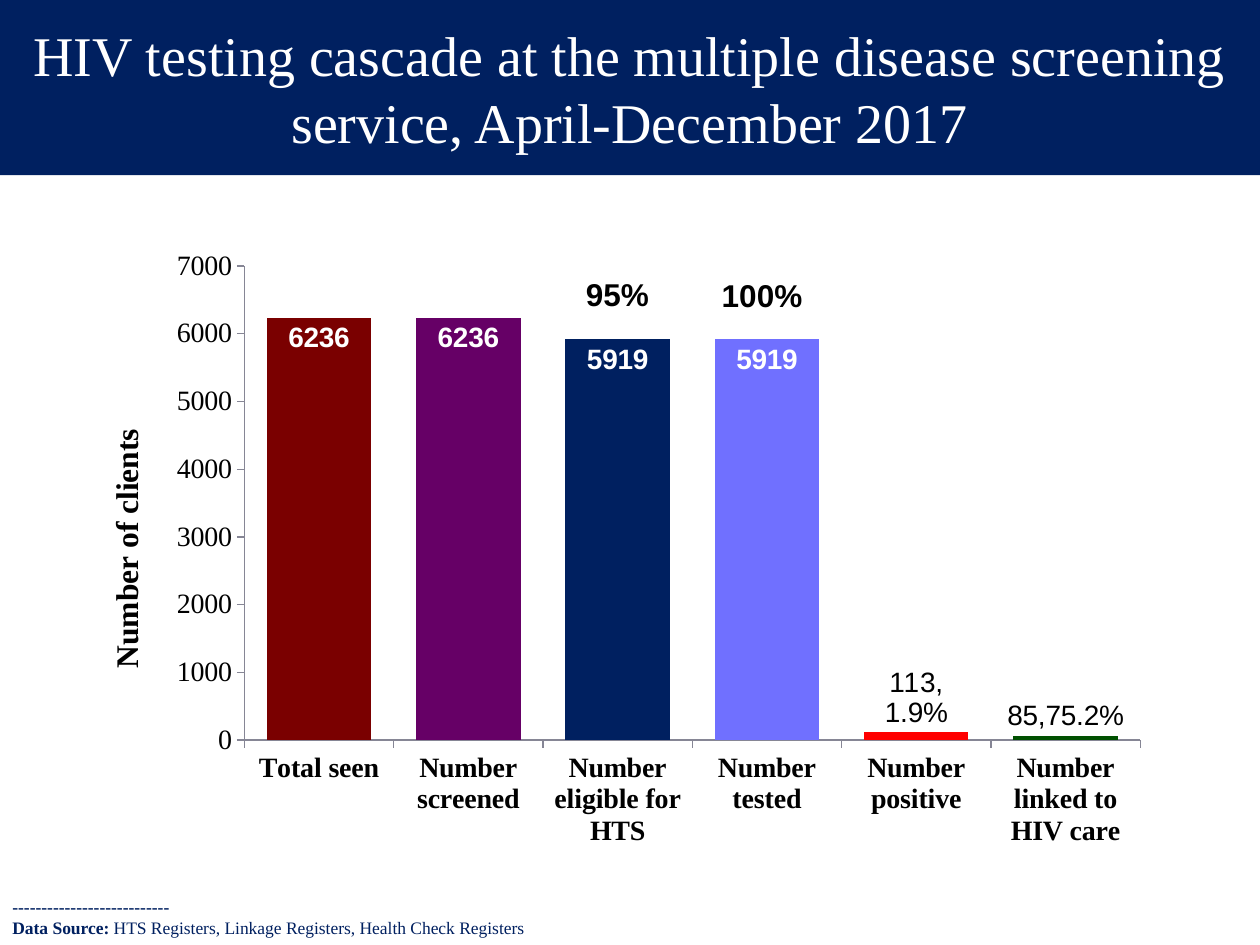
from dataclasses import dataclass
from typing import Optional

from lxml import etree
from pptx import Presentation
from pptx.chart.data import CategoryChartData
from pptx.dml.color import RGBColor
from pptx.enum.chart import XL_CHART_TYPE, XL_LABEL_POSITION, XL_TICK_MARK
from pptx.enum.shapes import MSO_SHAPE
from pptx.enum.text import MSO_ANCHOR, PP_ALIGN
from pptx.oxml.ns import qn
from pptx.util import Cm, Pt

COLUMN = XL_CHART_TYPE.COLUMN_CLUSTERED
INSIDE = XL_LABEL_POSITION.INSIDE_END
OUTSIDE = XL_LABEL_POSITION.OUTSIDE_END
TICK_OUT = XL_TICK_MARK.OUTSIDE
TICK_NONE = XL_TICK_MARK.NONE
RECT = MSO_SHAPE.RECTANGLE
MIDDLE = MSO_ANCHOR.MIDDLE
CENTER = PP_ALIGN.CENTER

NAVY = RGBColor(0x00, 0x20, 0x60)
WHITE = RGBColor(0xFF, 0xFF, 0xFF)
BLACK = RGBColor(0x00, 0x00, 0x00)
GRAY = RGBColor(0x86, 0x86, 0x95)
MAROON = RGBColor(0x7A, 0x00, 0x00)
PURPLE = RGBColor(0x66, 0x00, 0x66)
LILAC = RGBColor(0x70, 0x70, 0xFF)
RED = RGBColor(0xFF, 0x00, 0x00)
GREEN = RGBColor(0x00, 0x50, 0x00)

SERIF = "Times New Roman"
SANS = "Arial"


@dataclass
class Step:
    name: str
    count: int
    color: RGBColor
    label: Optional[str] = None


@dataclass
class Rate:
    text: str
    left: float
    top: float
    width: float


STEPS = [
    Step("Total seen", 6236, MAROON),
    Step("Number screened", 6236, PURPLE),
    Step("Number eligible for HTS", 5919, NAVY),
    Step("Number tested", 5919, LILAC),
    Step("Number positive", 113, RED, "113,\n1.9%"),
    Step("Number linked to HIV care", 68, GREEN, "85,75.2%"),
]
RATES = [Rate("95%", 11.56, 5.41, 1.8), Rate("100%", 14.3, 5.44, 2.16)]


def style(font, face: str, size: float, color: RGBColor, bold: bool = False) -> None:
    font.name = face
    font.size = Pt(size)
    font.bold = bold
    font.color.rgb = color


def draw_title(slide, text: str) -> None:
    band = slide.shapes.add_shape(RECT, 0, 0, Cm(25.4), Cm(3.53))
    band.shadow.inherit = False
    band.fill.solid()
    band.fill.fore_color.rgb = NAVY
    band.line.fill.background()
    frame = band.text_frame
    frame.text = text
    frame.word_wrap = True
    frame.vertical_anchor = MIDDLE
    line = frame.paragraphs[0]
    line.alignment = CENTER
    style(line.runs[0].font, SERIF, 32, WHITE)


def draw_source(slide) -> None:
    box = slide.shapes.add_textbox(0, Cm(17.93), Cm(15.49), Cm(1.12))
    frame = box.text_frame
    frame.word_wrap = True
    frame.text = "-" * 27
    style(frame.paragraphs[0].runs[0].font, SERIF, 10, NAVY, True)
    line = frame.add_paragraph()
    line.text = "Data Source: "
    line.add_run().text = "HTS Registers, Linkage Registers, Health Check Registers"
    for run, bold in zip(line.runs, (True, False)):
        style(run.font, SERIF, 10, NAVY, bold)


def draw_rate(slide, rate: Rate) -> None:
    box = slide.shapes.add_textbox(Cm(rate.left), Cm(rate.top), Cm(rate.width), Cm(1.02))
    frame = box.text_frame
    frame.word_wrap = False
    frame.text = rate.text
    style(frame.paragraphs[0].runs[0].font, SANS, 18, BLACK, True)


def style_axis(axis, bold: bool) -> None:
    axis.has_major_gridlines = False
    axis.major_tick_mark = TICK_OUT
    axis.minor_tick_mark = TICK_NONE
    axis.format.line.color.rgb = GRAY
    style(axis.tick_labels.font, SERIF, 16, BLACK, bold)


def place_plot(chart, x: float, y: float, w: float, h: float) -> None:
    area = chart.plots[0]._element.getparent()
    for old in area.findall(qn("c:layout")):
        area.remove(old)
    layout = etree.Element(qn("c:layout"))
    area.insert(0, layout)
    manual = etree.SubElement(layout, qn("c:manualLayout"))
    parts = {"layoutTarget": "inner", "xMode": "edge", "yMode": "edge",
             "x": x, "y": y, "w": w, "h": h}
    for tag, value in parts.items():
        etree.SubElement(manual, qn(f"c:{tag}")).set("val", str(value))


def draw_bar(point, step: Step) -> None:
    point.format.fill.solid()
    point.format.fill.fore_color.rgb = step.color
    label = point.data_label
    if step.label is None:
        style(label.font, SANS, 16, WHITE, True)
        label.position = INSIDE
        return
    frame = label.text_frame
    frame.text = step.label
    for line in frame.paragraphs:
        style(line.runs[0].font, SANS, 16, BLACK)
    label.position = OUTSIDE


def draw_chart(slide, steps: list[Step]) -> None:
    data = CategoryChartData()
    data.categories = [step.name for step in steps]
    data.add_series("Series 1", [step.count for step in steps])
    chart = slide.shapes.add_chart(
        COLUMN, Cm(1.27), Cm(4.22), Cm(22.86), Cm(14.27), data).chart
    chart.has_legend = False
    chart.has_title = False
    style(chart.font, SERIF, 14, BLACK)
    place_plot(chart, 0.16, 0.08, 0.79, 0.67)

    style_axis(chart.category_axis, True)
    axis = chart.value_axis
    style_axis(axis, False)
    axis.minimum_scale = 0
    axis.maximum_scale = 7000
    axis.major_unit = 1000
    title = axis.axis_title.text_frame
    title.text = "Number of clients"
    style(title.paragraphs[0].runs[0].font, SERIF, 18, BLACK, True)

    plot = chart.plots[0]
    plot.gap_width = 43
    plot.vary_by_categories = False
    series = plot.series[0]
    series.invert_if_negative = False
    series.format.fill.solid()
    series.format.fill.fore_color.rgb = RED
    labels = series.data_labels
    labels.show_value = True
    labels.position = INSIDE
    style(labels.font, SANS, 16, BLACK, True)
    for i, step in enumerate(steps):
        draw_bar(series.points[i], step)


def main() -> None:
    deck = Presentation()
    deck.slide_width = Cm(25.4)
    deck.slide_height = Cm(19.05)
    slide = deck.slides.add_slide(deck.slide_layouts[6])
    draw_title(slide, "HIV testing cascade at the multiple disease screening "
                      "service, April-December 2017")
    draw_source(slide)
    draw_chart(slide, STEPS)
    for rate in RATES:
        draw_rate(slide, rate)
    deck.save("out.pptx")


if __name__ == "__main__":
    main()
